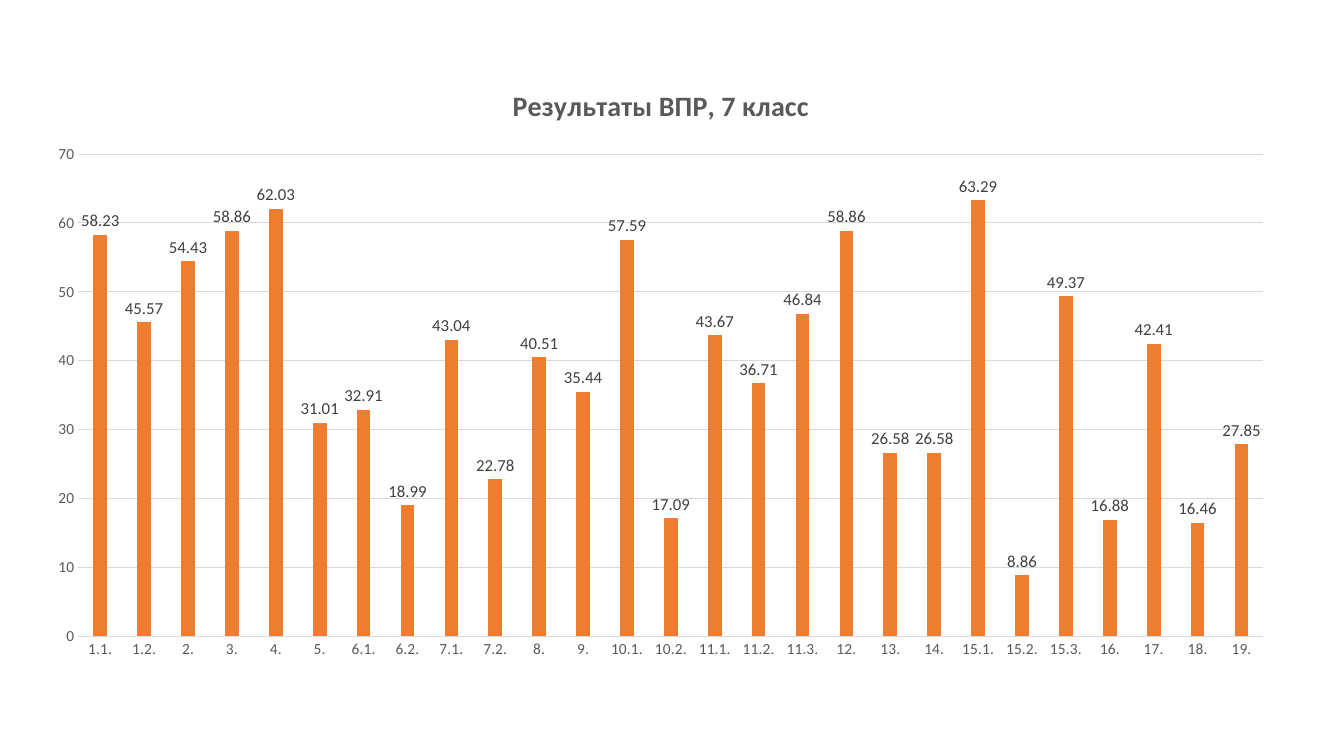
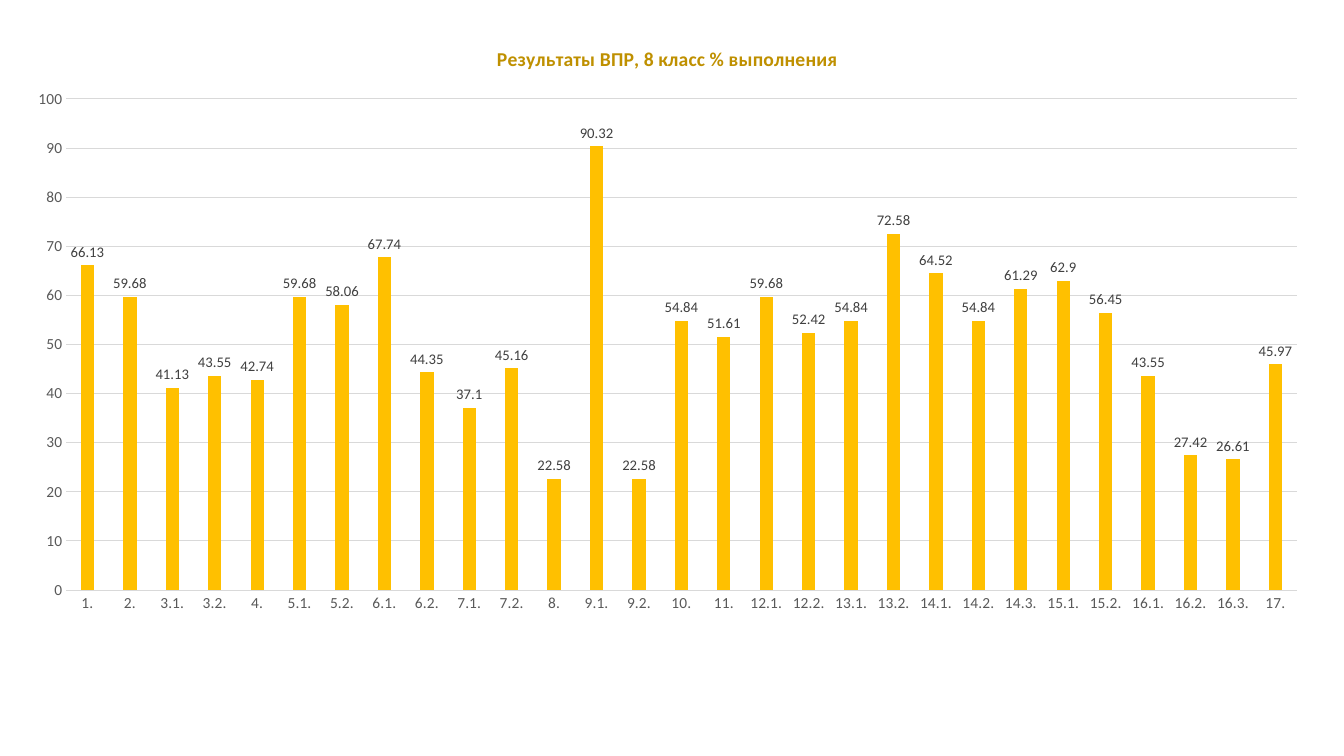
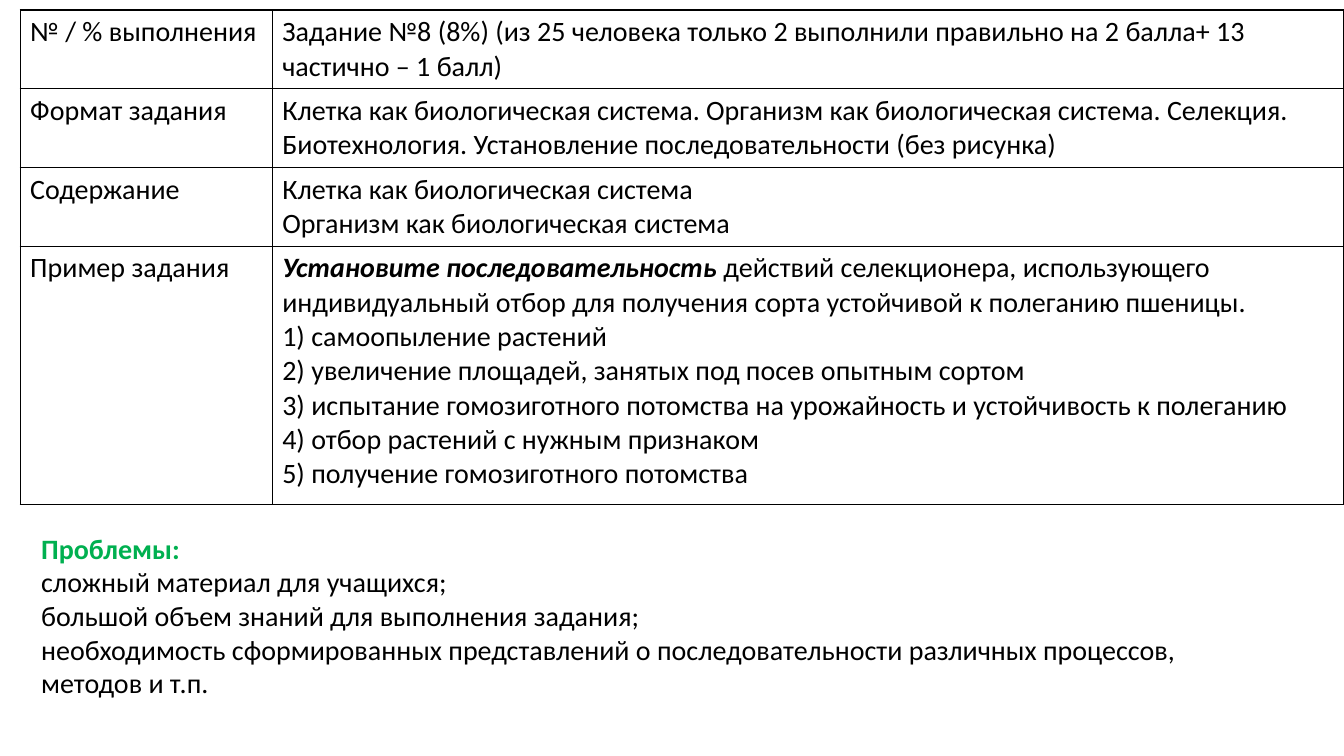
from lxml.etree import SubElement
from pptx import Presentation
from pptx.chart.data import CategoryChartData
from pptx.dml.color import RGBColor
from pptx.enum.chart import XL_CHART_TYPE, XL_LABEL_POSITION, XL_TICK_MARK
from pptx.oxml.ns import qn
from pptx.util import Inches, Pt

FONT = "Calibri"
BLACK = RGBColor(0x00, 0x00, 0x00)
GRAY = RGBColor(0x59, 0x59, 0x59)
LABEL_GRAY = RGBColor(0x40, 0x40, 0x40)
GRID_GRAY = RGBColor(0xD9, 0xD9, 0xD9)
ORANGE = RGBColor(0xED, 0x7D, 0x31)
GOLD = RGBColor(0xFF, 0xC0, 0x00)
DARK_GOLD = RGBColor(0xBF, 0x90, 0x00)
GREEN = RGBColor(0x00, 0xB0, 0x50)

GRADE_7_RESULTS = {
    "1.1.": 58.23, "1.2.": 45.57, "2.": 54.43, "3.": 58.86, "4.": 62.03,
    "5.": 31.01, "6.1.": 32.91, "6.2.": 18.99, "7.1.": 43.04, "7.2.": 22.78,
    "8.": 40.51, "9.": 35.44, "10.1.": 57.59, "10.2.": 17.09, "11.1.": 43.67,
    "11.2.": 36.71, "11.3.": 46.84, "12.": 58.86, "13.": 26.58, "14.": 26.58,
    "15.1.": 63.29, "15.2.": 8.86, "15.3.": 49.37, "16.": 16.88, "17.": 42.41,
    "18.": 16.46, "19.": 27.85,
}
GRADE_8_RESULTS = {
    "1.": 66.13, "2.": 59.68, "3.1.": 41.13, "3.2.": 43.55, "4.": 42.74,
    "5.1.": 59.68, "5.2.": 58.06, "6.1.": 67.74, "6.2.": 44.35, "7.1.": 37.1,
    "7.2.": 45.16, "8.": 22.58, "9.1.": 90.32, "9.2.": 22.58, "10.": 54.84,
    "11.": 51.61, "12.1.": 59.68, "12.2.": 52.42, "13.1.": 54.84, "13.2.": 72.58,
    "14.1.": 64.52, "14.2.": 54.84, "14.3.": 61.29, "15.1.": 62.9, "15.2.": 56.45,
    "16.1.": 43.55, "16.2.": 27.42, "16.3.": 26.61, "17.": 45.97,
}

# Each row: height, heading, paragraphs
TASK_ROWS = [
    (0.77, "№ / % выполнения", [
        "Задание №8 (8%) (из 25 человека только 2 выполнили правильно на 2 балла+ 13 "
        "частично – 1 балл)"]),
    (0.77, "Формат задания", [
        "Клетка как биологическая система. Организм как биологическая система. Селекция. "
        "Биотехнология. Установление последовательности (без рисунка)"]),
    (0.77, "Содержание", [
        "Клетка как биологическая система",
        "Организм как биологическая система"]),
    (2.56, "Пример задания", [
        "действий селекционера, использующего",
        "индивидуальный отбор для получения сорта устойчивой к полеганию пшеницы.",
        "1) самоопыление растений",
        "2) увеличение площадей, занятых под посев опытным сортом",
        "3) испытание гомозиготного потомства на урожайность и устойчивость к полеганию",
        "4) отбор растений с нужным признаком",
        "5) получение гомозиготного потомства"]),
]
TASK_LEAD = "Установите последовательность "
PROBLEMS = [
    "сложный материал для учащихся;",
    "большой объем знаний для выполнения задания;",
    "необходимость сформированных представлений о последовательности различных процессов, "
    "методов и т.п.",
]


def set_font(font, size, color, bold=False):
    font.name = FONT
    font.size = Pt(size)
    font.color.rgb = color
    font.bold = bold


def write_paragraphs(frame, texts):
    frame.text = "\n".join(texts)
    for paragraph in frame.paragraphs:
        set_font(paragraph.font, 20, BLACK)


def style_axis(axis):
    axis.major_tick_mark = axis.minor_tick_mark = XL_TICK_MARK.NONE
    set_font(axis.tick_labels.font, 11, GRAY)


def style_gray_line(line):
    line.color.rgb = GRID_GRAY
    line.width = Pt(0.75)


def add_results_chart(slide, box, title, title_size, title_color,
                      results, color, label_size, maximum):
    data = CategoryChartData()
    data.categories = list(results)
    data.add_series("Series 1", list(results.values()))
    chart = slide.shapes.add_chart(
        XL_CHART_TYPE.COLUMN_CLUSTERED, *map(Inches, box), data).chart
    set_font(chart.font, 10, BLACK)
    chart.has_legend = False
    chart.has_title = True
    chart.chart_title.text_frame.text = title
    set_font(chart.chart_title.text_frame.paragraphs[0].font, title_size, title_color, True)

    style_axis(chart.category_axis)
    style_gray_line(chart.category_axis.format.line)
    value_axis = chart.value_axis
    style_axis(value_axis)
    value_axis.format.line.fill.background()
    value_axis.has_major_gridlines = True
    style_gray_line(value_axis.major_gridlines.format.line)
    value_axis.minimum_scale, value_axis.maximum_scale = 0, maximum
    value_axis.major_unit = 10

    plot = chart.plots[0]
    plot.vary_by_categories = False
    plot.gap_width, plot.overlap = 219, -27
    fill = plot.series[0].format.fill
    fill.solid()
    fill.fore_color.rgb = color
    plot.has_data_labels = True
    labels = plot.data_labels
    labels.show_value = True
    labels.position = XL_LABEL_POSITION.OUTSIDE_END
    set_font(labels.font, label_size, LABEL_GRAY)


def style_cell(cell):
    """Clear the fill and draw a thin black border on all four sides."""
    properties = cell._tc.get_or_add_tcPr()
    for side in ("a:lnL", "a:lnR", "a:lnT", "a:lnB"):
        line = SubElement(properties, qn(side), w=str(Pt(1)))
        SubElement(SubElement(line, qn("a:solidFill")), qn("a:srgbClr"), val=str(BLACK))
    cell.fill.background()


def add_task_table(slide, left, top, heading_width, content_width):
    height = sum(row[0] for row in TASK_ROWS)
    table = slide.shapes.add_table(
        len(TASK_ROWS), 2, Inches(left), Inches(top),
        Inches(heading_width + content_width), Inches(height)).table
    table.first_row = table.horz_banding = False
    table.columns[0].width = Inches(heading_width)
    table.columns[1].width = Inches(content_width)
    for index, (row_height, heading, texts) in enumerate(TASK_ROWS):
        table.rows[index].height = Inches(row_height)
        for column, paragraphs in enumerate(([heading], texts)):
            cell = table.cell(index, column)
            write_paragraphs(cell.text_frame, paragraphs)
            style_cell(cell)

    paragraph = table.cell(len(TASK_ROWS) - 1, 1).text_frame.paragraphs[0]
    ending = paragraph.runs[0].text
    paragraph.runs[0].text = TASK_LEAD
    paragraph.runs[0].font.bold = paragraph.runs[0].font.italic = True
    paragraph.add_run().text = ending


def add_problems(slide, box):
    frame = slide.shapes.add_textbox(*map(Inches, box)).text_frame
    frame.word_wrap = True
    write_paragraphs(frame, ["Проблемы:"] + PROBLEMS)
    set_font(frame.paragraphs[0].font, 20, GREEN, True)


def main():
    presentation = Presentation()
    presentation.slide_width = Inches(13.33)
    presentation.slide_height = Inches(7.5)
    blank = presentation.slide_layouts[6]
    grade_7, grade_8, task = [presentation.slides.add_slide(blank) for _ in range(3)]

    add_results_chart(grade_7, (0.33, 0.63, 12.45, 6.03), "Результаты ВПР, 7 класс",
                      20, GRAY, GRADE_7_RESULTS, ORANGE, 12, 70)
    add_results_chart(grade_8, (0.12, 0.24, 13, 5.96), "Результаты ВПР, 8 класс % выполнения",
                      14, DARK_GOLD, GRADE_8_RESULTS, GOLD, 10.5, 100)
    add_task_table(task, 0.2, 0.1, 2.5, 10.63)
    add_problems(task, (0.31, 5.22, 12.49, 1.78))
    presentation.save("out.pptx")


if __name__ == "__main__":
    main()
